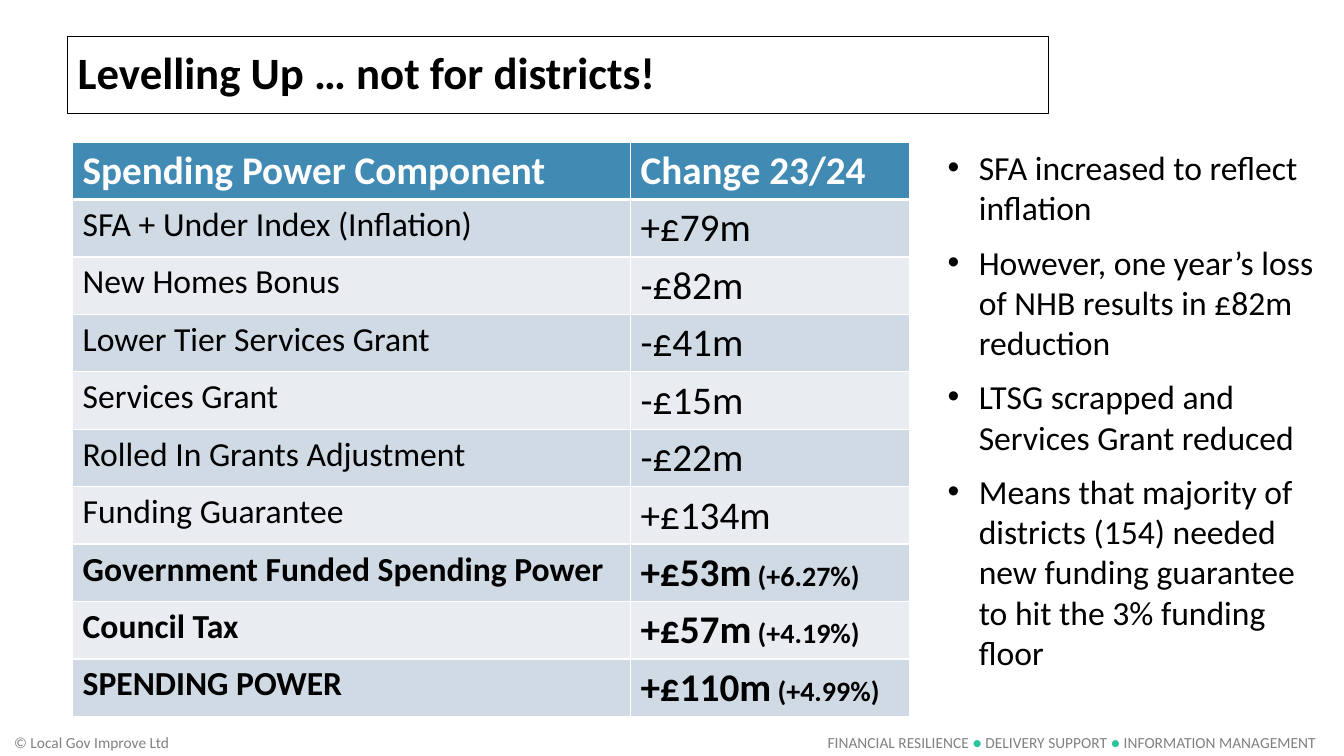
from lxml import etree
from pptx import Presentation
from pptx.dml.color import RGBColor
from pptx.enum.text import MSO_ANCHOR, PP_ALIGN
from pptx.oxml.ns import qn
from pptx.util import Inches, Pt

MIDDLE, TOP = MSO_ANCHOR.MIDDLE, MSO_ANCHOR.TOP
LEFT = PP_ALIGN.LEFT
TITLE_ONLY = 5
FONT = "Calibri"
COLORS = {
    "text": "000000", "white": "FFFFFF", "footer": "808080", "dot": "2BC59D",
    "header": "418AB3", "band_dark": "CFDAE5", "band_light": "E9EDF2",
}

# Component, change, percentage, bold
SPENDING = [
    ("SFA + Under Index (Inflation)", "+£79m", "", False),
    ("New Homes Bonus", "-£82m", "", False),
    ("Lower Tier Services Grant", "-£41m", "", False),
    ("Services Grant", "-£15m", "", False),
    ("Rolled In Grants Adjustment", "-£22m", "", False),
    ("Funding Guarantee", "+£134m", "", False),
    ("Government Funded Spending Power", "+£53m", " (+6.27%)", True),
    ("Council Tax", "+£57m", " (+4.19%)", True),
    ("SPENDING POWER", "+£110m", " (+4.99%)", True),
]
REMARKS = [
    "SFA increased to reflect inflation",
    "However, one year’s loss of NHB results in £82m reduction",
    "LTSG scrapped and Services Grant reduced",
    "Means that majority of districts (154) needed new funding guarantee "
    "to hit the 3% funding floor",
]
SERVICES = ["FINANCIAL RESILIENCE", "DELIVERY SUPPORT", "INFORMATION MANAGEMENT"]


def rgb(name):
    return RGBColor.from_string(COLORS[name])


def write(paragraph, text, size=24, color="text", bold=False):
    run = paragraph.add_run()
    run.text = text
    run.font.name = FONT
    run.font.size = Pt(size)
    run.font.bold = bold
    run.font.color.rgb = rgb(color)


def add_text_frame(slide, box, anchor=TOP, wrap=True):
    frame = slide.shapes.add_textbox(*map(Inches, box)).text_frame
    frame.word_wrap = wrap
    frame.vertical_anchor = anchor
    return frame


def add_bullet(paragraph, indent):
    properties = paragraph._p.get_or_add_pPr()
    properties.set("marL", str(indent))
    properties.set("indent", str(-indent))
    etree.SubElement(properties, qn("a:buFont"), typeface="Arial")
    etree.SubElement(properties, qn("a:buChar"), char="•")


def format_cell(cell, fill, bottom_width=1):
    properties = cell._tc.get_or_add_tcPr()
    for side in ("L", "R", "T", "B"):
        width = bottom_width if side == "B" else 1
        border = etree.SubElement(properties, qn(f"a:ln{side}"), w=str(Pt(width)))
        solid = etree.SubElement(border, qn("a:solidFill"))
        etree.SubElement(solid, qn("a:srgbClr"), val=COLORS["white"])
    cell.fill.solid()
    cell.fill.fore_color.rgb = rgb(fill)


def build_title(slide, box, text):
    title = slide.shapes.title
    title.left, title.top, title.width, title.height = map(Inches, box)
    title.line.color.rgb = rgb("text")
    title.line.width = Pt(0.75)
    title.text_frame.vertical_anchor = MIDDLE
    heading = title.text_frame.paragraphs[0]
    heading.alignment = LEFT
    heading.line_spacing = 0.9
    write(heading, text, size=32, bold=True)


def build_spending_table(slide, box):
    row_count = len(SPENDING) + 1
    table = slide.shapes.add_table(row_count, 2, *map(Inches, box)).table
    table.horz_banding = False
    for column, share in zip(table.columns, (2 / 3, 1 / 3)):
        column.width = Inches(box[2] * share)
    for row in table.rows:
        row.height = Inches(box[3] / row_count)

    # Header row
    for column, heading in enumerate(("Spending Power Component", "Change 23/24")):
        cell = table.cell(0, column)
        format_cell(cell, "header", bottom_width=3)
        write(cell.text_frame.paragraphs[0], heading, size=28, color="white", bold=True)

    # Banded body rows
    for row, (component, change, percentage, bold) in enumerate(SPENDING, start=1):
        component_cell, change_cell = table.cell(row, 0), table.cell(row, 1)
        for cell in (component_cell, change_cell):
            format_cell(cell, "band_dark" if row % 2 else "band_light")
        write(component_cell.text_frame.paragraphs[0], component, bold=bold)
        amount = change_cell.text_frame.paragraphs[0]
        write(amount, change, size=28, bold=bold)
        if percentage:
            write(amount, percentage, size=20, bold=bold)


def build_remarks(slide, box):
    frame = add_text_frame(slide, box)
    for index, remark in enumerate(REMARKS):
        paragraph = frame.add_paragraph() if index else frame.paragraphs[0]
        add_bullet(paragraph, Inches(0.31))
        if index:
            paragraph.space_before = Pt(9.8)
        write(paragraph, remark)


def build_footer(slide, box):
    left, top, width, height = box
    services_width = 5.12

    # Copyright line
    notice = add_text_frame(slide, (left, top, 1.8, height), MIDDLE, wrap=False)
    notice.margin_left = Inches(0.14)
    write(notice.paragraphs[0], "© Local Gov Improve Ltd", size=11, color="footer")

    # Services separated by dots
    services_box = (left + width - services_width, top, services_width, height)
    services = add_text_frame(slide, services_box, MIDDLE, wrap=False).paragraphs[0]
    for index, service in enumerate(SERVICES):
        if index:
            write(services, " ● ", size=11, color="dot")
        write(services, service, size=11, color="footer")


def main():
    presentation = Presentation()
    presentation.slide_width = Inches(13.33)
    presentation.slide_height = Inches(7.5)
    slide = presentation.slides.add_slide(presentation.slide_layouts[TITLE_ONLY])
    build_footer(slide, (0, 7.23, 13.23, 0.27))
    build_title(slide, (0.67, 0.36, 9.73, 0.77), "Levelling Up … not for districts!")
    build_spending_table(slide, (0.72, 1.41, 8.3, 5.7))
    build_remarks(slide, (9.3, 1.41, 3.83, 5.76))
    presentation.save("out.pptx")


if __name__ == "__main__":
    main()
